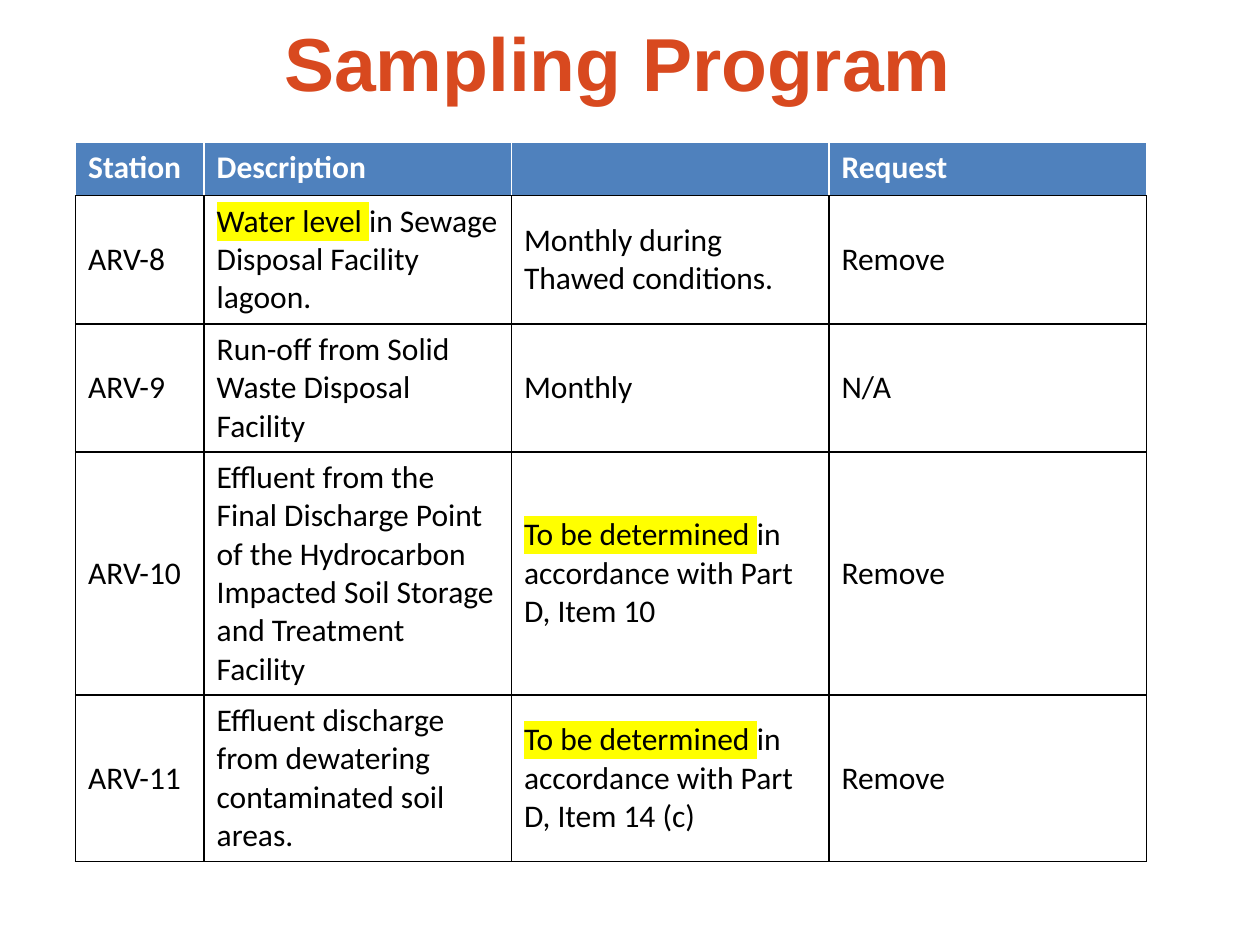
from lxml.etree import SubElement as Sub, Element
from pptx import Presentation
from pptx.dml.color import RGBColor
from pptx.enum.text import MSO_ANCHOR as Anchor, PP_ALIGN as Align
from pptx.oxml.ns import qn
from pptx.util import Inches, Pt

WIDE, HIGH = 10, 7.5
COLS = (1.02, 2.44, 2.52, 2.52)
ROWS = (0.43, 1.02, 1.02, 1.93, 1.32)
HEAD = ("Station", "Description", "", "Request")
DATA = (
    ("ARV-8", "Water level |in Sewage\nDisposal Facility\nlagoon.",
     "Monthly during\nThawed conditions.", "Remove"),
    ("ARV-9", "Run-off from Solid Waste Disposal Facility", "Monthly", "N/A"),
    ("ARV-10", "Effluent from the\nFinal Discharge Point\nof the Hydrocarbon\n"
     "Impacted Soil Storage\nand Treatment\nFacility",
     "To be determined |in\naccordance with Part\nD, Item 10", "Remove"),
    ("ARV-11", "Effluent discharge\nfrom dewatering\ncontaminated soil\nareas.",
     "To be determined |in\naccordance with Part\nD, Item 14 (c)", "Remove"),
)


def color(code):
    """Turn a hex string into a colour."""
    return RGBColor.from_string(code)


def place(left, top, width, height):
    """Turn shares of the slide into a box of lengths."""
    return [Inches(WIDE * left), Inches(HIGH * top),
            Inches(WIDE * width), Inches(HIGH * height)]


def style(font, face, size, code, bold):
    """Set the look of a font."""
    font.name, font.size, font.bold = face, Pt(size), bold
    font.color.rgb = color(code)


def mark(run, code):
    """Highlight a run behind its text."""
    light = Element(qn("a:highlight"))
    Sub(light, qn("a:srgbClr"), val=code)
    run.font.fill._xPr.find(qn("a:solidFill")).addnext(light)


def border(cell, sides):
    """Draw one-point borders in the colour given for each side."""
    props = cell._tc.get_or_add_tcPr()
    for spot, side in enumerate("LRTB"):
        line = Element(qn("a:ln" + side), w=str(Pt(1)))
        Sub(Sub(line, qn("a:solidFill")), qn("a:srgbClr"), val=sides[side])
        props.insert(spot, line)


def write(cell, text, code, bold):
    """Fill a cell, marking what stands before a bar."""
    frame = cell.text_frame
    frame.text = text.replace("|", "")
    for para, line in zip(frame.paragraphs, text.split("\n")):
        parts = line.split("|")
        if len(parts) > 1:
            para.runs[0].text = parts[0]
            para.add_run().text = parts[1]
        style(para.font, "Calibri", 18, code, bold)
        for run in para.runs:
            style(run.font, "Calibri", 18, code, bold)
        if len(parts) > 1:
            mark(para.runs[0], "FFFF00")


def title(slide, text, box):
    """Put the heading in the title placeholder."""
    shape = slide.shapes.title
    shape.left, shape.top, shape.width, shape.height = box
    frame = shape.text_frame
    frame.text = text
    frame.vertical_anchor = Anchor.MIDDLE
    para = frame.paragraphs[0]
    para.alignment = Align.CENTER
    style(para.runs[0].font, "Arial", 42.9, "D8491F", True)


def grid(slide, box):
    """Build the station table inside its box."""
    table = slide.shapes.add_table(len(ROWS), len(COLS), *box).table
    for col, share in zip(table.columns, COLS):
        col.width = int(box[2] * share / sum(COLS))
    for row, share in zip(table.rows, ROWS):
        row.height = int(box[3] * share / sum(ROWS))
    for r, texts in enumerate((HEAD,) + DATA):
        top = r == 0
        edge = "FFFFFF" if top else "000000"
        for c, text in enumerate(texts):
            cell = table.cell(r, c)
            cell.vertical_anchor = Anchor.TOP if top else Anchor.MIDDLE
            write(cell, text, "FFFFFF" if top else "000000", top)
            if top:
                cell.fill.solid()
                cell.fill.fore_color.rgb = color("4F81BD")
            else:
                cell.fill.background()
            border(cell, {"L": edge, "R": edge, "T": "FFFFFF" if top else "000000",
                          "B": "000000"})


def main():
    """Build the slide and save it."""
    deck = Presentation()
    deck.slide_width, deck.slide_height = Inches(WIDE), Inches(HIGH)
    slide = deck.slides.add_slide(deck.slide_layouts[5])
    title(slide, "Sampling Program", place(0.11, 0, 0.76, 0.13))
    grid(slide, place(0.06, 0.15, 0.85, 0.76))
    deck.save("out.pptx")


if __name__ == "__main__":
    main()
